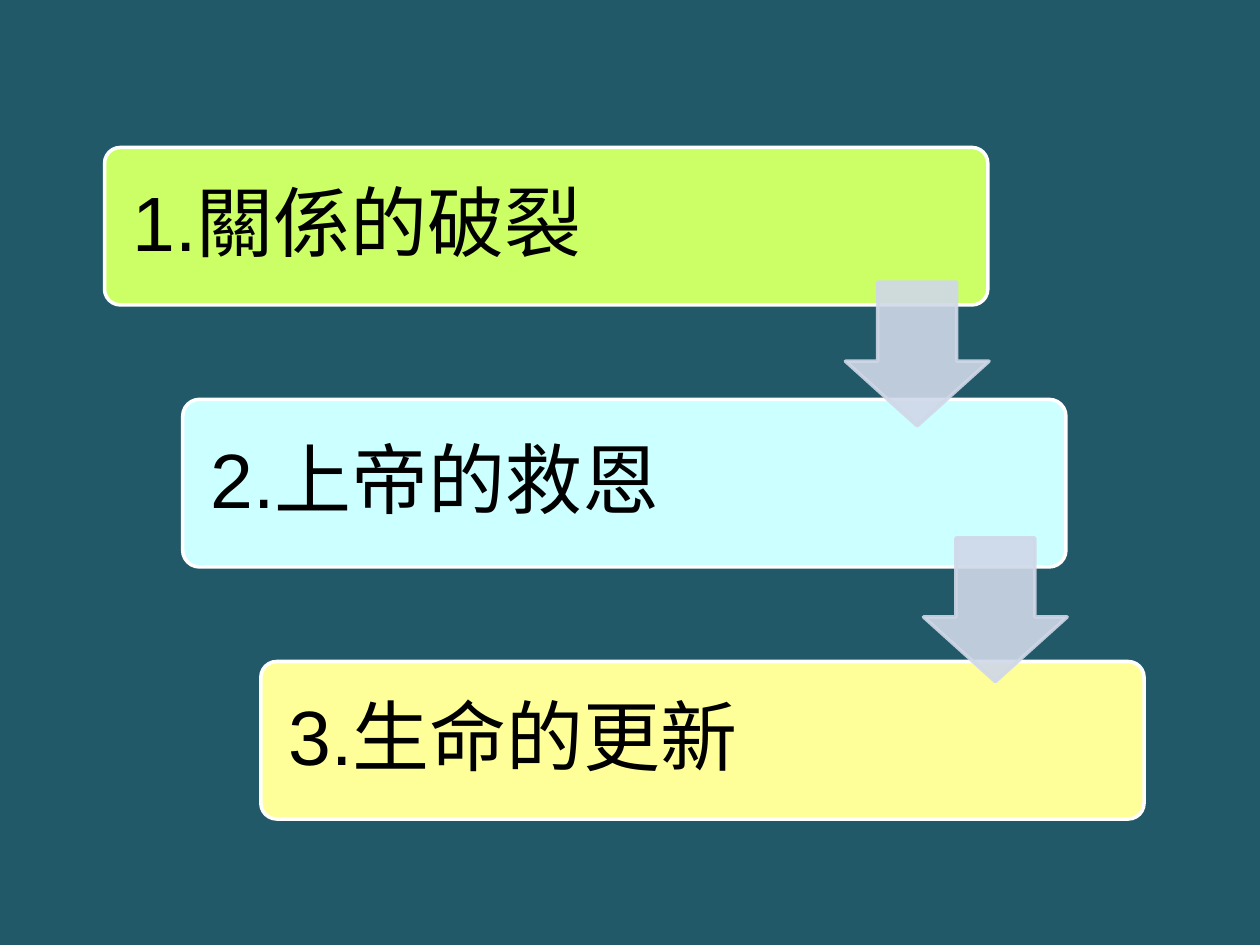
from dataclasses import dataclass

from lxml import etree
from pptx import Presentation
from pptx.dml.color import RGBColor
from pptx.enum.shapes import MSO_SHAPE
from pptx.enum.text import MSO_ANCHOR, PP_ALIGN
from pptx.oxml.ns import qn
from pptx.util import Emu, Pt

ROUNDED = MSO_SHAPE.ROUNDED_RECTANGLE
DOWN_ARROW = MSO_SHAPE.DOWN_ARROW
MIDDLE = MSO_ANCHOR.MIDDLE
LEFT = PP_ALIGN.LEFT

EMU_PER_PX = 9144
COLORS = {
    "background": "215968",
    "lime": "CCFF66",
    "aqua": "CCFFFF",
    "cream": "FFFF99",
    "border": "FFFFFF",
    "arrow": "D0D8E8",
    "text": "000000",
}
STEP_LEFT, STEP_SHIFT, STEP_WIDTH = 83, 62, 701
LABEL_INSET, LABEL_WIDTH, LABEL_MARGIN = 4, 518, 18
ARROW_SHIFT, ARROW_SIZE = 588, 114


@dataclass(frozen=True)
class Step:
    label: str
    color: str
    top: int
    height: int


STEPS = [
    Step("1.關係的破裂", "lime", 117, 125),
    Step("2.上帝的救恩", "aqua", 317, 133),
    Step("3.生命的更新", "cream", 525, 125),
]
ARROW_TOPS = [224, 427]


def px(length: int) -> Emu:
    """Turn pixels into EMU."""
    return Emu(length * EMU_PER_PX)


def rgb(name: str) -> RGBColor:
    """Look up a named colour."""
    return RGBColor.from_string(COLORS[name])


def step_left(index: int) -> int:
    """Give the left edge of a step on the staircase."""
    return STEP_LEFT + index * STEP_SHIFT


def add_panel(slide, kind, box: tuple, fill: str, line: str, adjustments: tuple):
    """Draw a filled and outlined preset shape."""
    panel = slide.shapes.add_shape(kind, *map(px, box))
    panel.shadow.inherit = False
    for position, value in enumerate(adjustments):
        panel.adjustments[position] = value
    panel.fill.solid()
    panel.fill.fore_color.rgb = rgb(fill)
    panel.line.color.rgb = rgb(line)
    panel.line.width = Pt(2)
    return panel


def add_text(slide, text: str, box: tuple, *, size: int = 44, color: str = "text",
             font: str = "Arial", margin: int = LABEL_MARGIN) -> None:
    """Write one line of text in a box, centred vertically."""
    frame = slide.shapes.add_textbox(*map(px, box)).text_frame
    frame.word_wrap = True
    frame.vertical_anchor = MIDDLE
    frame.margin_left = frame.margin_right = px(margin)
    frame.margin_top = frame.margin_bottom = px(margin)
    paragraph = frame.paragraphs[0]
    paragraph.alignment = LEFT
    paragraph.line_spacing = 0.9
    paragraph.space_after = Pt(15)
    run = paragraph.add_run()
    run.text = text
    run.font.size = Pt(size)
    run.font.name = font
    run.font.color.rgb = rgb(color)


def add_step(slide, index: int, step: Step) -> None:
    """Draw one step with its label."""
    left = step_left(index)
    add_panel(slide, ROUNDED, (left, step.top, STEP_WIDTH, step.height),
              step.color, "border", (0.1,))
    add_text(slide, step.label, (left + LABEL_INSET, step.top + LABEL_INSET,
                                 LABEL_WIDTH, step.height - 2 * LABEL_INSET))


def add_arrow(slide, index: int, top: int) -> None:
    """Draw a slightly transparent arrow from one step to the next."""
    box = (step_left(index) + ARROW_SHIFT, top, ARROW_SIZE, ARROW_SIZE)
    arrow = add_panel(slide, DOWN_ARROW, box, "arrow", "arrow", (0.45, 0.55))
    arrow.adjustments[0], arrow.adjustments[1] = 0.55, 0.45
    for color in arrow._element.spPr.iter(qn("a:srgbClr")):
        etree.SubElement(color, qn("a:alpha"), val="90000")


def main() -> None:
    """Build the slide and save it."""
    presentation = Presentation()
    presentation.slide_width, presentation.slide_height = px(1000), px(750)
    slide = presentation.slides.add_slide(presentation.slide_layouts[6])
    slide.background.fill.solid()
    slide.background.fill.fore_color.rgb = rgb("background")
    for index, step in enumerate(STEPS):
        add_step(slide, index, step)
    for index, top in enumerate(ARROW_TOPS):
        add_arrow(slide, index, top)
    presentation.save("out.pptx")


if __name__ == "__main__":
    main()
